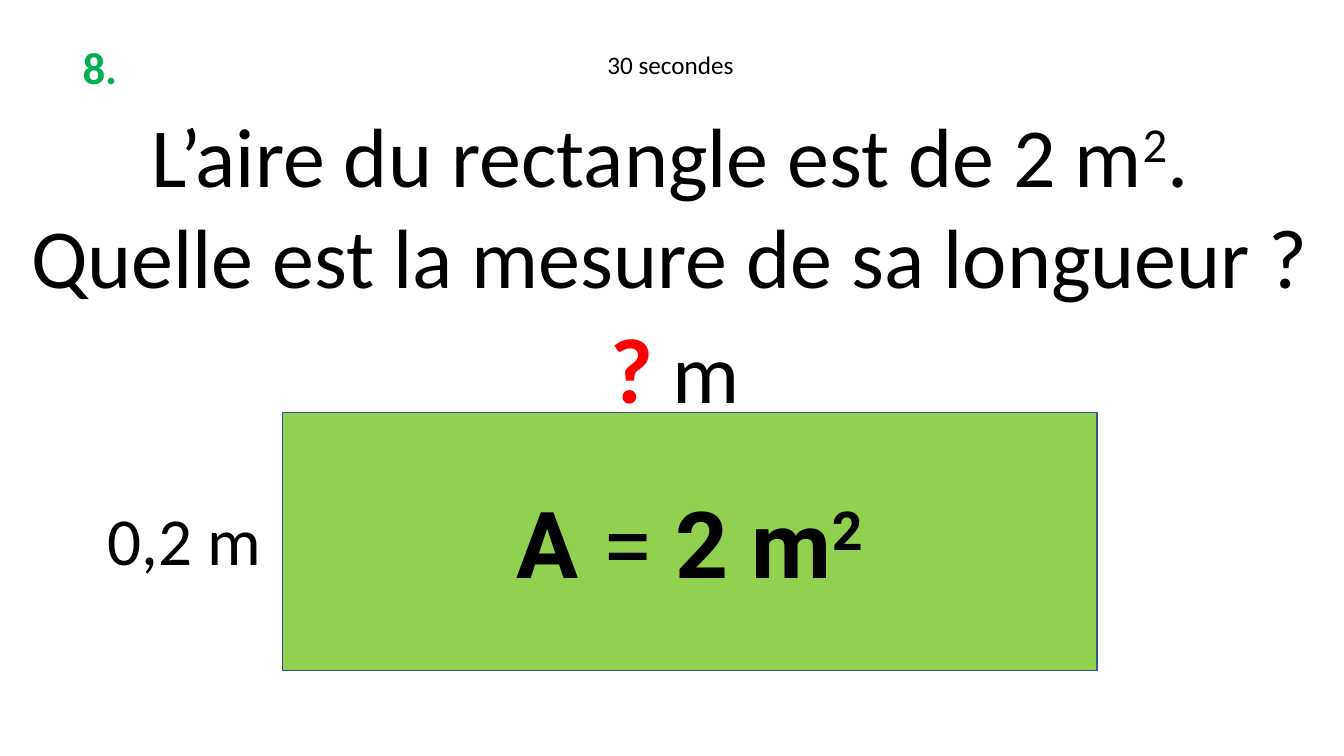
from dataclasses import dataclass

from pptx import Presentation
from pptx.dml.color import RGBColor
from pptx.enum.shapes import MSO_SHAPE
from pptx.enum.text import MSO_ANCHOR, MSO_AUTO_SIZE, PP_ALIGN
from pptx.util import Inches, Pt


@dataclass(frozen=True)
class Theme:
    body_font: str = "Calibri"
    area_font: str = "Roboto"
    black: RGBColor = RGBColor(0x00, 0x00, 0x00)
    red: RGBColor = RGBColor(0xFF, 0x00, 0x00)
    number_green: RGBColor = RGBColor(0x00, 0xB0, 0x50)
    fill_green: RGBColor = RGBColor(0x92, 0xD0, 0x50)
    outline_blue: RGBColor = RGBColor(0x32, 0x54, 0x91)
    timer_size: Pt = Pt(18)
    number_size: Pt = Pt(32)
    width_size: Pt = Pt(48)
    question_size: Pt = Pt(60)
    emphasis_size: Pt = Pt(66)


THEME = Theme()


def place(shape, left, top, width, height):
    shape.left, shape.top = Inches(left), Inches(top)
    shape.width, shape.height = Inches(width), Inches(height)


def style_paragraph(paragraph, size, color=THEME.black, font=THEME.body_font,
                    bold=False, alignment=PP_ALIGN.CENTER):
    paragraph.alignment = alignment
    paragraph.line_spacing = 1.0
    paragraph.font.name = font
    paragraph.font.size = size
    paragraph.font.bold = bold
    paragraph.font.color.rgb = color


def add_run(paragraph, text, superscript=False):
    run = paragraph.add_run()
    run.text = text
    if superscript:
        run._r.get_or_add_rPr().set("baseline", "30000")
    return run


def write_label(shape, text, size, **style):
    frame = shape.text_frame
    frame.word_wrap = True
    frame.auto_size = MSO_AUTO_SIZE.SHAPE_TO_FIT_TEXT
    frame.vertical_anchor = MSO_ANCHOR.TOP
    paragraph = frame.paragraphs[0]
    add_run(paragraph, text)
    style_paragraph(paragraph, size, **style)
    return paragraph


def add_label(shapes, box, text, size, **style):
    label = shapes.add_textbox(*(Inches(length) for length in box))
    return write_label(label, text, size, **style)


def add_outline_label(shapes, box, text, size, **style):
    left, top, width, height = (Inches(length) for length in box)
    right, bottom = left + width, top + height
    builder = shapes.build_freeform(left, top)
    builder.add_line_segments([(right, top), (right, bottom), (left, bottom)])
    outline = builder.convert_to_shape()
    outline.shadow.inherit = False
    outline.fill.background()
    outline.line.fill.background()
    return write_label(outline, text, size, **style)


def write_question(title):
    place(title, 0.16, 0.98, 12.97, 2.12)
    frame = title.text_frame
    frame.word_wrap = True
    frame.auto_size = MSO_AUTO_SIZE.SHAPE_TO_FIT_TEXT
    frame.vertical_anchor = MSO_ANCHOR.TOP
    area_line = frame.paragraphs[0]
    add_run(area_line, "L’aire du rectangle est de 2 m")
    add_run(area_line, "2", superscript=True)
    add_run(area_line, ".")
    length_line = frame.add_paragraph()
    add_run(length_line, "Quelle est la mesure de sa longueur ?")
    for paragraph in frame.paragraphs:
        paragraph.space_before = Pt(0)
        style_paragraph(paragraph, THEME.question_size)


def add_area_rectangle(shapes):
    rectangle = shapes.add_shape(MSO_SHAPE.RECTANGLE, Inches(2.8), Inches(4.09),
                                 Inches(8.08), Inches(2.56))
    rectangle.shadow.inherit = False
    rectangle.fill.solid()
    rectangle.fill.fore_color.rgb = THEME.fill_green
    rectangle.line.color.rgb = THEME.outline_blue
    rectangle.line.width = Pt(1)
    frame = rectangle.text_frame
    frame.vertical_anchor = MSO_ANCHOR.MIDDLE
    paragraph = frame.paragraphs[0]
    add_run(paragraph, "A ")
    add_run(paragraph, "=").font.bold = False
    add_run(paragraph, " 2 m")
    add_run(paragraph, "2", superscript=True)
    style_paragraph(paragraph, THEME.emphasis_size, font=THEME.area_font, bold=True)


def add_figure(slide):
    figure = slide.shapes.add_group_shape()
    add_area_rectangle(figure.shapes)
    add_label(figure.shapes, (0.97, 4.89, 1.75, 0.91), "0,2 m",
              THEME.width_size, alignment=PP_ALIGN.LEFT)
    length = add_label(figure.shapes, (5.96, 3.04, 1.75, 1.21), "?",
                       THEME.question_size, alignment=PP_ALIGN.LEFT)
    unknown = length.runs[0].font
    unknown.size = THEME.emphasis_size
    unknown.bold = True
    unknown.color.rgb = THEME.red
    add_run(length, " m")


def main():
    presentation = Presentation()
    presentation.slide_width = Inches(13.33)
    presentation.slide_height = Inches(7.5)
    slide = presentation.slides.add_slide(presentation.slide_layouts[5])
    write_question(slide.shapes.title)
    add_outline_label(slide.shapes, (0.72, 0.34, 0.79, 0.65), "8.", THEME.number_size,
                      color=THEME.number_green, bold=True, alignment=PP_ALIGN.LEFT)
    add_outline_label(slide.shapes, (5.17, 0.44, 2.96, 0.41), "30 secondes",
                      THEME.timer_size)
    add_figure(slide)
    presentation.save("out.pptx")


if __name__ == "__main__":
    main()
